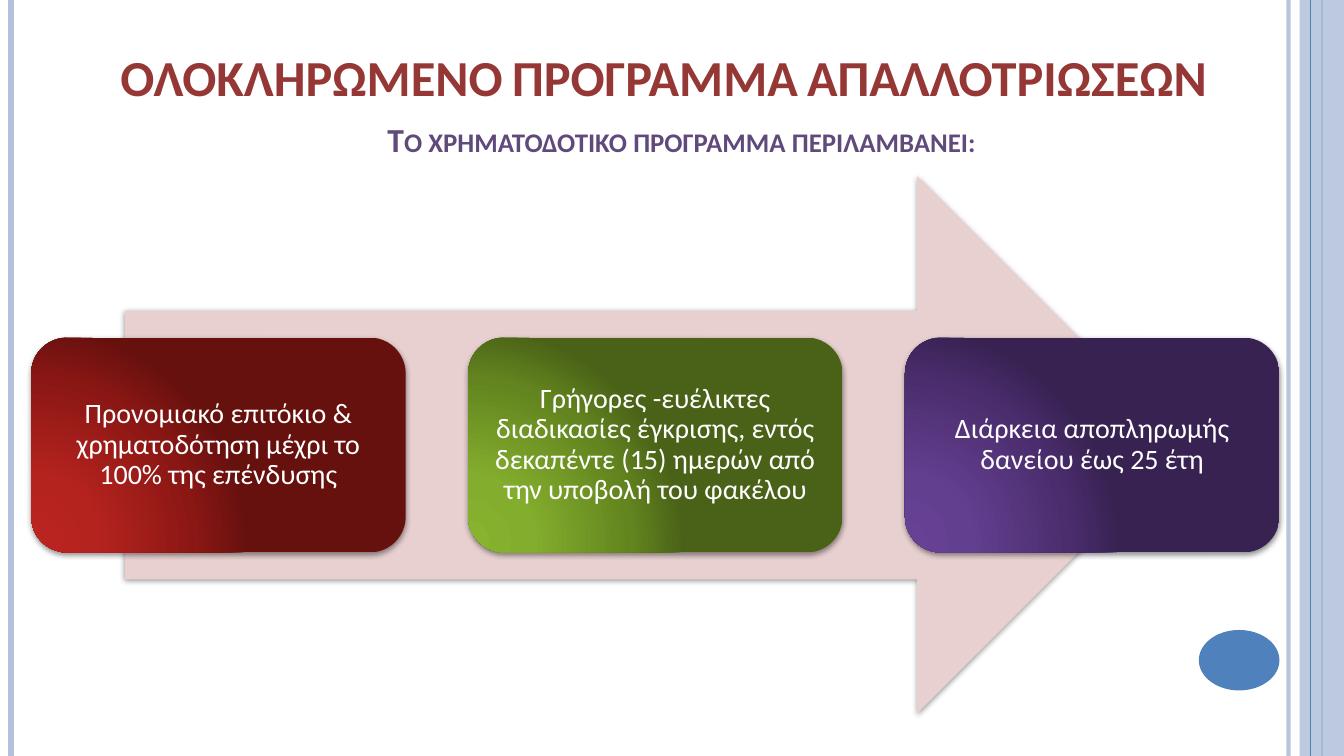
from pptx import Presentation
from pptx.dml.color import RGBColor
from pptx.enum import shapes, text
from pptx.oxml import parse_xml
from pptx.oxml.ns import nsdecls, qn
from pptx.util import Inches, Pt

WHITE = RGBColor(0xFF, 0xFF, 0xFF)
PALE_BLUE = RGBColor(0xB3, 0xC1, 0xDB)
BLUE = RGBColor(0x4F, 0x81, 0xBD)
TITLE_RED = RGBColor(0x95, 0x37, 0x35)
SUBTITLE_PURPLE = RGBColor(0x60, 0x4A, 0x7B)
PALE_PINK = RGBColor(0xE8, 0xD0, 0xD0)

RED_SHADES = [RGBColor.from_string(c) for c in ("BC2420", "B5231F", "8B1714", "67110F")]
GREEN_SHADES = [RGBColor.from_string(c) for c in ("88B32F", "83AD2D", "63851F", "4A6217")]
PURPLE_SHADES = [RGBColor.from_string(c) for c in ("674195", "633F90", "4B2D6E", "372251")]
GRADIENT_STOPS = (0, 30, 75, 100)

BENEFITS = [
    ("Προνομιακό επιτόκιο & χρηματοδότηση μέχρι το 100% της επένδυσης", RED_SHADES),
    ("Γρήγορες -ευέλικτες διαδικασίες έγκρισης, εντός δεκαπέντε (15) ημερών "
     "από την υποβολή του φακέλου", GREEN_SHADES),
    ("Διάρκεια αποπληρωμής δανείου έως 25 έτη", PURPLE_SHADES),
]


def set_alpha(fill_owner, percent):
    """Make the solid colour inside an XML element partly transparent."""
    color = next(fill_owner.iter(qn("a:srgbClr")))
    color.append(parse_xml(f'<a:alpha {nsdecls("a")} val="{percent * 1000}"/>'))


def add_plain_shape(slide, kind, left, top, width, height, color):
    shape = slide.shapes.add_shape(
        kind, Inches(left), Inches(top), Inches(width), Inches(height))
    shape.shadow.inherit = False
    shape.fill.solid()
    shape.fill.fore_color.rgb = color
    shape.line.fill.background()
    return shape


def add_soft_shadow(shape):
    effects = shape._element.spPr.find(qn("a:effectLst"))
    effects.append(parse_xml(
        f'<a:outerShdw {nsdecls("a")} blurRad="{Pt(4)}" dist="{Pt(1.6)}" '
        'dir="5400000" rotWithShape="0">'
        '<a:srgbClr val="000000"><a:alpha val="42000"/></a:srgbClr></a:outerShdw>'))


def set_corner_glow(shape, shades):
    """Fill a shape with a round gradient that starts near its lower left corner."""
    stops = "".join(
        f'<a:gs pos="{stop * 1000}"><a:srgbClr val="{shade}"/></a:gs>'
        for stop, shade in zip(GRADIENT_STOPS, shades))
    gradient = parse_xml(
        f'<a:gradFill {nsdecls("a")} rotWithShape="1"><a:gsLst>{stops}</a:gsLst>'
        '<a:path path="circle"><a:fillToRect l="5000" t="100000" r="120000" b="10000"/>'
        '</a:path></a:gradFill>')
    properties = shape._element.spPr
    properties.replace(properties.find(qn("a:solidFill")), gradient)


def add_vertical_rule(slide, x, height, color, weight):
    rule = slide.shapes.add_connector(
        shapes.MSO_CONNECTOR.STRAIGHT, Inches(x), 0, Inches(x), Inches(height))
    rule.line.color.rgb = color
    rule.line.width = Pt(weight)
    rule._element.spPr.append(parse_xml(f'<a:effectLst {nsdecls("a")}/>'))
    return rule


def add_frame(slide, width, height):
    """Draw the rules, side band and page disc that frame the slide."""
    inner_rule = add_vertical_rule(slide, width - 0.55, height, PALE_BLUE, 3)
    set_alpha(inner_rule._element.spPr, 93)
    add_vertical_rule(slide, 0.11, height, PALE_BLUE, 4.5)
    add_vertical_rule(slide, width - 0.22, height, BLUE, 1.5)
    band = add_plain_shape(slide, shapes.MSO_SHAPE.RECTANGLE,
                           width - 0.44, 0, 0.44, height, PALE_BLUE)
    set_alpha(band._element.spPr, 87)
    add_vertical_rule(slide, width - 0.33, height, BLUE, 0.75)
    add_plain_shape(slide, shapes.MSO_SHAPE.OVAL,
                    width - 1.44, height - 1.25, 0.8, 0.6, BLUE)


def add_heading(slide, left, top, width, height, wording, size, color, anchor, wrap):
    """Place one centred line of bold small capitals."""
    box = slide.shapes.add_textbox(
        Inches(left), Inches(top), Inches(width), Inches(height))
    frame = box.text_frame
    frame.word_wrap = wrap
    frame.vertical_anchor = anchor
    paragraph = frame.paragraphs[0]
    paragraph.alignment = text.PP_ALIGN.CENTER
    run = paragraph.add_run()
    run.text = wording
    run.font.name = "Calibri"
    run.font.size = Pt(size)
    run.font.bold = True
    run.font.color.rgb = color
    run.font._element.set("cap", "small")


def add_benefit_card(slide, left, top, width, height, wording, shades):
    card = add_plain_shape(slide, shapes.MSO_SHAPE.ROUNDED_RECTANGLE,
                           left, top, width, height, shades[0])
    set_corner_glow(card, shades)
    add_soft_shadow(card)
    frame = card.text_frame
    frame.word_wrap = True
    frame.vertical_anchor = text.MSO_ANCHOR.MIDDLE
    frame.margin_left = frame.margin_right = Inches(0.08)
    frame.margin_top = frame.margin_bottom = Inches(0.08)
    paragraph = frame.paragraphs[0]
    paragraph.text = wording
    paragraph.alignment = text.PP_ALIGN.CENTER
    paragraph.line_spacing = 0.9
    paragraph.font.name = "Calibri"
    paragraph.font.size = Pt(20)
    paragraph.font.color.rgb = WHITE


def add_benefit_process(slide, left, top, width, height):
    """Lay the benefit cards in a row over a wide arrow."""
    arrow_width = 0.85 * width
    arrow = add_plain_shape(slide, shapes.MSO_SHAPE.RIGHT_ARROW,
                            left + (width - arrow_width) / 2, top,
                            arrow_width, height, PALE_PINK)
    add_soft_shadow(arrow)
    card_width, card_height = 0.3 * width, 0.4 * height
    pitch = (width - card_width) / (len(BENEFITS) - 1)
    for index, (wording, shades) in enumerate(BENEFITS):
        add_benefit_card(slide, left + index * pitch, top + (height - card_height) / 2,
                         card_width, card_height, wording, shades)


def main():
    width, height = 13.33, 7.5
    presentation = Presentation()
    presentation.slide_width = Inches(width)
    presentation.slide_height = Inches(height)
    slide = presentation.slides.add_slide(presentation.slide_layouts[6])
    add_frame(slide, width, height)
    add_heading(slide, 0.67, 0.21, 11.83, 0.9,
                "ΟΛΟΚΛΗΡΩΜΕΝΟ ΠΡΟΓΡΑΜΜΑ ΑΠΑΛΛΟΤΡΙΩΣΕΩΝ",
                36, TITLE_RED, text.MSO_ANCHOR.BOTTOM, True)
    add_benefit_process(slide, 0.31, 1.75, 12.38, 5.33)
    add_heading(slide, 3.68, 1.13, 6.16, 0.5,
                "Το χρηματοδοτικό πρόγραμμα περιλαμβάνει:",
                24, SUBTITLE_PURPLE, text.MSO_ANCHOR.TOP, False)
    presentation.save("out.pptx")


if __name__ == "__main__":
    main()
